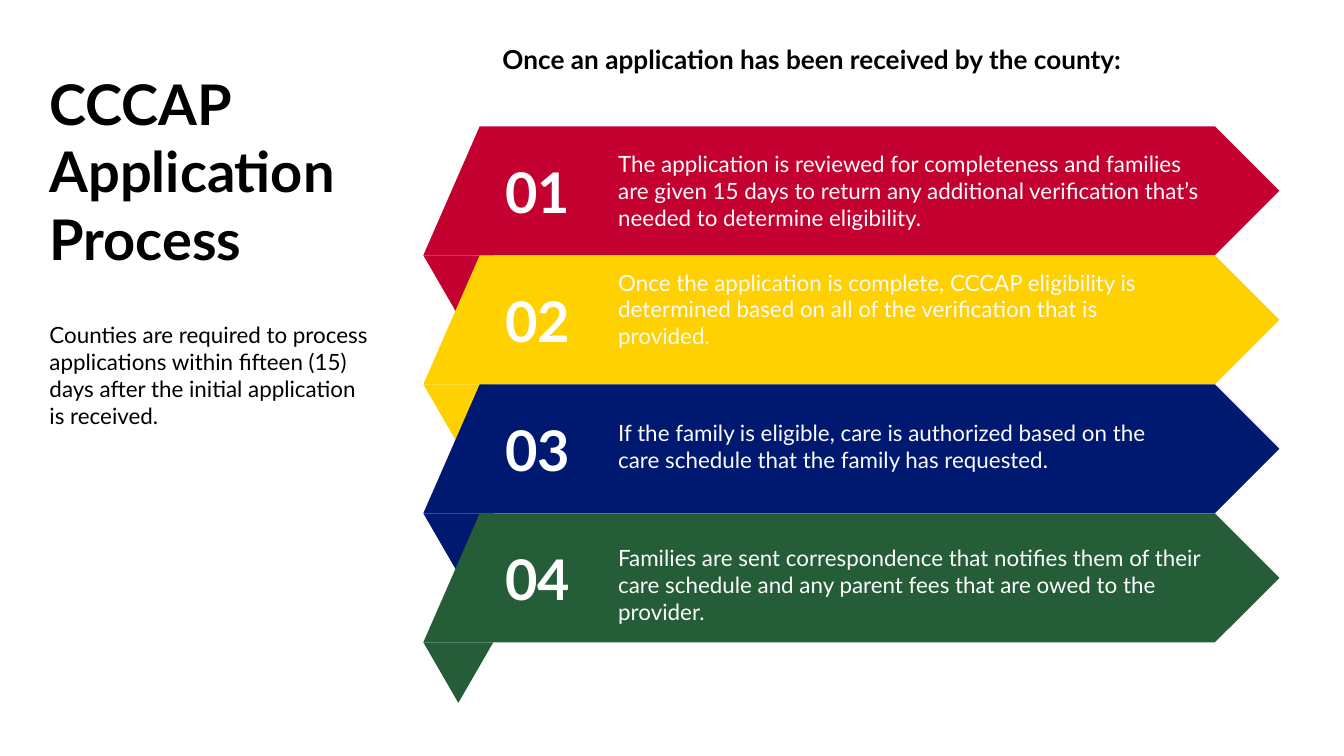
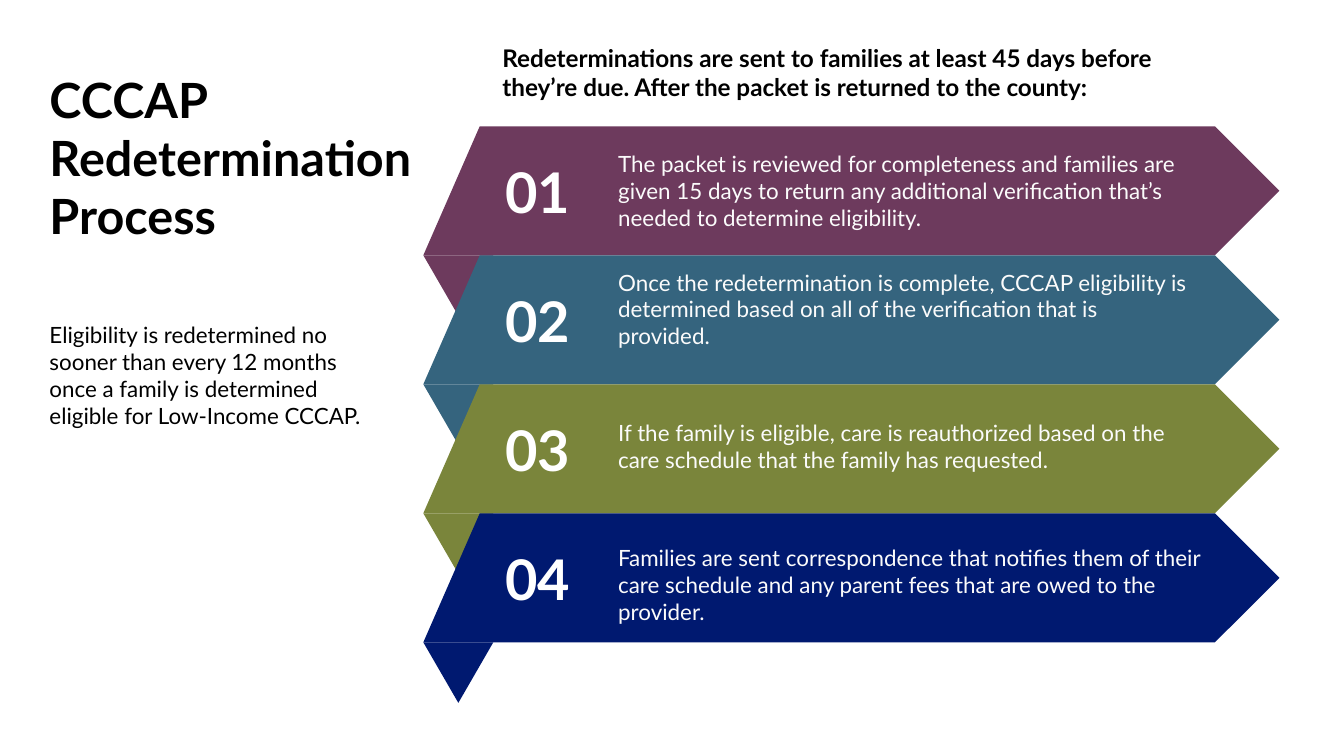
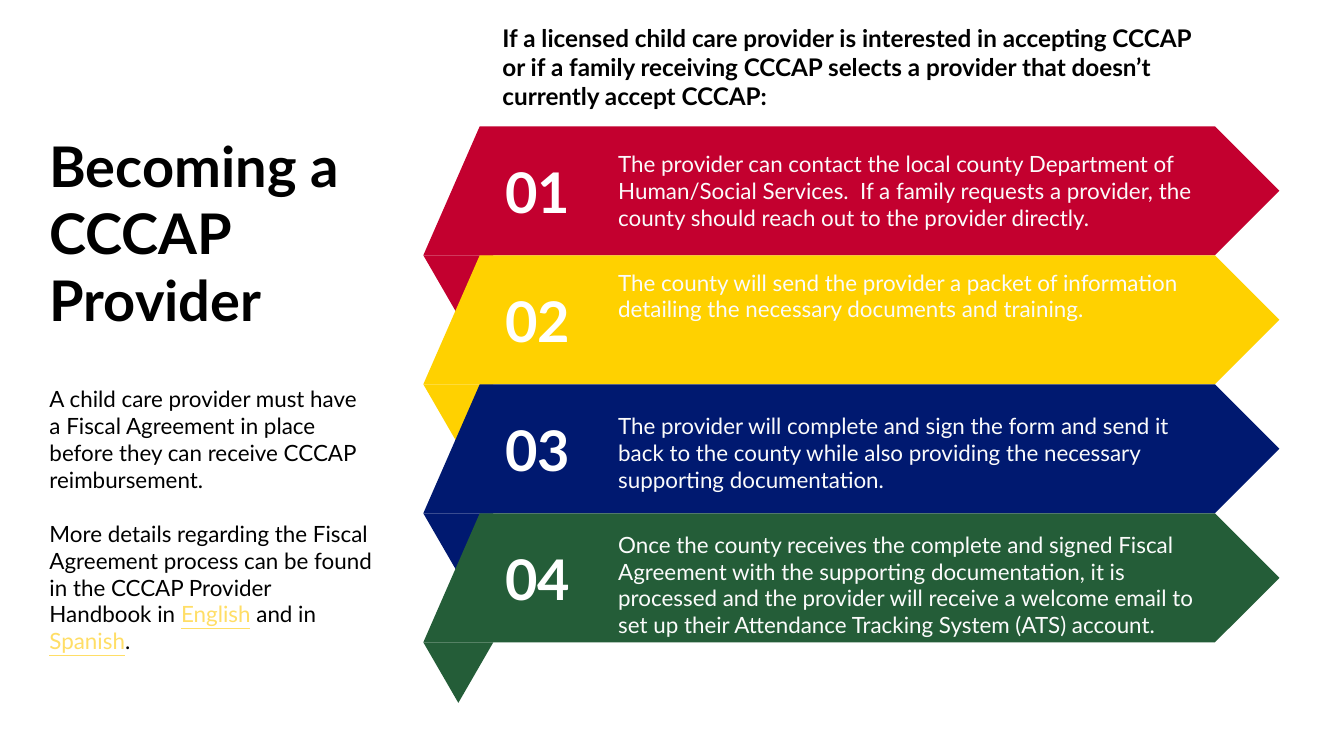
from itertools import cycle

from pptx import Presentation
from pptx.dml.color import RGBColor
from pptx.enum.shapes import MSO_SHAPE
from pptx.enum.text import PP_ALIGN
from pptx.util import Inches, Pt

# Shared colours and font
BLACK = RGBColor(0x00, 0x00, 0x00)
WHITE = RGBColor(0xFF, 0xFF, 0xFF)
PALE = RGBColor(0xFB, 0xFB, 0xFB)
LINK = RGBColor(0xFF, 0xDE, 0x66)
RED = RGBColor(0xC3, 0x00, 0x2F)
GOLD = RGBColor(0xFF, 0xD1, 0x00)
NAVY = RGBColor(0x00, 0x19, 0x70)
GREEN = RGBColor(0x24, 0x5D, 0x38)
PLUM = RGBColor(0x6D, 0x3A, 0x5D)
TEAL = RGBColor(0x35, 0x64, 0x7E)
OLIVE = RGBColor(0x7A, 0x85, 0x3B)
STATE = (RED, GOLD, NAVY, GREEN)
MUTED = (PLUM, TEAL, OLIVE, NAVY)
FONT = "Lato"

# Arrow grid, in inches
LEFT, TOP, STEP = 3.15, 0.94, 0.96

# Slide content: head, title and note are (box, size, text);
# a step is (top, height, text); words between underscores are links
PAGES = [
    {
        "hues": STATE,
        "title": ((0.27, 0.47, 3.49, 1.9), 30, "CCCAP Application Process"),
        "note": ((0.27, 2.34, 2.6, 1.47), 12,
                 "Counties are required to process applications within "
                 "fifteen (15) days after the initial application is received."),
        "head": ((3.64, 0.27, 5.39, 0.52), 14,
                 "Once an application has been received by the county:"),
        "steps": [
            (1.09, 0.66, "The application is reviewed for completeness and "
             "families are given 15 days to return any additional "
             "verification that’s needed to determine eligibility."),
            (1.97, 0.84, "Once the application is complete, CCCAP eligibility "
             "is determined based on all of the verification that is provided."),
            (3.09, 0.66, "If the family is eligible, care is authorized based "
             "on the care schedule that the family has requested."),
            (4.02, 0.66, "Families are sent correspondence that notifies them "
             "of their care schedule and any parent fees that are owed to "
             "the provider."),
        ],
    },
    {
        "hues": MUTED,
        "title": ((0.27, 0.47, 3.04, 1.4), 26, "CCCAP Redetermination Process"),
        "note": ((0.27, 2.34, 2.6, 0.96), 12,
                 "Eligibility is redetermined no sooner than every 12 months "
                 "once a family is determined eligible for Low-Income CCCAP."),
        "head": ((3.64, 0.27, 5.39, 0.52), 13,
                 "Redeterminations are sent to families at least 45 days before "
                 "they’re due. After the packet is returned to the county:"),
        "steps": [
            (1.09, 0.66, "The packet is reviewed for completeness and families "
             "are given 15 days to return any additional verification that’s "
             "needed to determine eligibility."),
            (1.97, 0.84, "Once the redetermination is complete, CCCAP "
             "eligibility is determined based on all of the verification "
             "that is provided."),
            (3.09, 0.66, "If the family is eligible, care is reauthorized based "
             "on the care schedule that the family has requested."),
            (4.02, 0.66, "Families are sent correspondence that notifies them "
             "of their care schedule and any parent fees that are owed to "
             "the provider."),
        ],
    },
    {
        "hues": STATE,
        "title": ((0.27, 0.93, 2.88, 1.18), 30, "Becoming a CCCAP Provider"),
        "note": ((0.27, 2.82, 2.6, 2.47), 12,
                 "A child care provider must have a Fiscal Agreement in place "
                 "before they can receive CCCAP reimbursement.\n"
                 "More details regarding the Fiscal Agreement process can be "
                 "found in the CCCAP Provider Handbook in _English_ and in "
                 "_Spanish_."),
        "head": ((3.64, 0.12, 5.39, 0.75), 13,
                 "If a licensed child care provider is interested in accepting "
                 "CCCAP or if a family receiving CCCAP selects a provider that "
                 "doesn’t currently accept CCCAP:"),
        "steps": [
            (1.09, 0.66, "The provider can contact the local county Department "
             "of Human/Social Services.  If a family requests a provider, the "
             "county should reach out to the provider directly."),
            (1.97, 0.84, "The county will send the provider a packet of "
             "information detailing the necessary documents and training."),
            (3.04, 0.66, "The provider will complete and sign the form and send "
             "it back to the county while also providing the necessary "
             "supporting documentation."),
            (3.92, 0.84, "Once the county receives the complete and signed "
             "Fiscal Agreement with the supporting documentation, it is "
             "processed and the provider will receive a welcome email to set "
             "up their Attendance Tracking System (ATS) account."),
        ],
    },
]


def write(slide, box, text, size=12, color=BLACK, bold=False,
          align=PP_ALIGN.LEFT, pad=(0.1, 0.05)):
    frame = slide.shapes.add_textbox(*map(Inches, box)).text_frame
    frame.word_wrap = True
    frame.margin_left = frame.margin_right = Inches(pad[0])
    frame.margin_top = frame.margin_bottom = Inches(pad[1])
    for n, line in enumerate(text.split("\n")):
        para = frame.add_paragraph() if n else frame.paragraphs[0]
        para.alignment = align
        if n:
            para.space_before = Pt(14.4)
        # Every second part is a link
        for part, link in zip(line.split("_"), cycle((False, True))):
            run = para.add_run()
            run.text = part
            font = run.font
            font.name, font.size, font.bold = FONT, Pt(size), bold
            font.color.rgb = LINK if link else color
            if link:
                font.underline = True


def paint(shape, color):
    shape.shadow.inherit = False
    shape.fill.solid()
    shape.fill.fore_color.rgb = color
    shape.line.fill.background()


# A 16:9 deck
deck = Presentation()
deck.slide_width = Inches(10)
deck.slide_height = Inches(10) * 9 // 16

for page in PAGES:
    slide = deck.slides.add_slide(deck.slide_layouts[6])

    # Arrow bands, each with a folded tail
    for n, color in enumerate(page["hues"]):
        top = TOP + n * STEP
        base = top + STEP
        group = slide.shapes.add_group_shape().shapes
        pen = group.build_freeform(Inches(3.57), Inches(top))
        edge = [(9.04, top), (9.52, top + STEP / 2), (9.04, base), (LEFT, base)]
        pen.add_line_segments([(Inches(x), Inches(y)) for x, y in edge])
        paint(pen.convert_to_shape(), color)
        tail = group.add_shape(MSO_SHAPE.ISOSCELES_TRIANGLE, Inches(LEFT),
                               Inches(base), Inches(0.52), Inches(0.45))
        tail.rotation = 180
        paint(tail, color)

    # Step numbers and texts
    for n, (top, high, text) in enumerate(page["steps"]):
        write(slide, (3.56, 1.14 + n * STEP, 0.88, 0.56), f"{n + 1:02}", size=30,
              color=WHITE, bold=True, align=PP_ALIGN.CENTER, pad=(0.05, 0.03))
        wide = 4.37 if n in (1, 2) else 4.47
        write(slide, (4.55, top, wide, high), text, color=PALE, pad=(0.05, 0.03))

    # Title, side note and heading
    for part in ("title", "note", "head"):
        box, size, text = page[part]
        write(slide, box, text, size=size, bold=part != "note")

deck.save("out.pptx")
